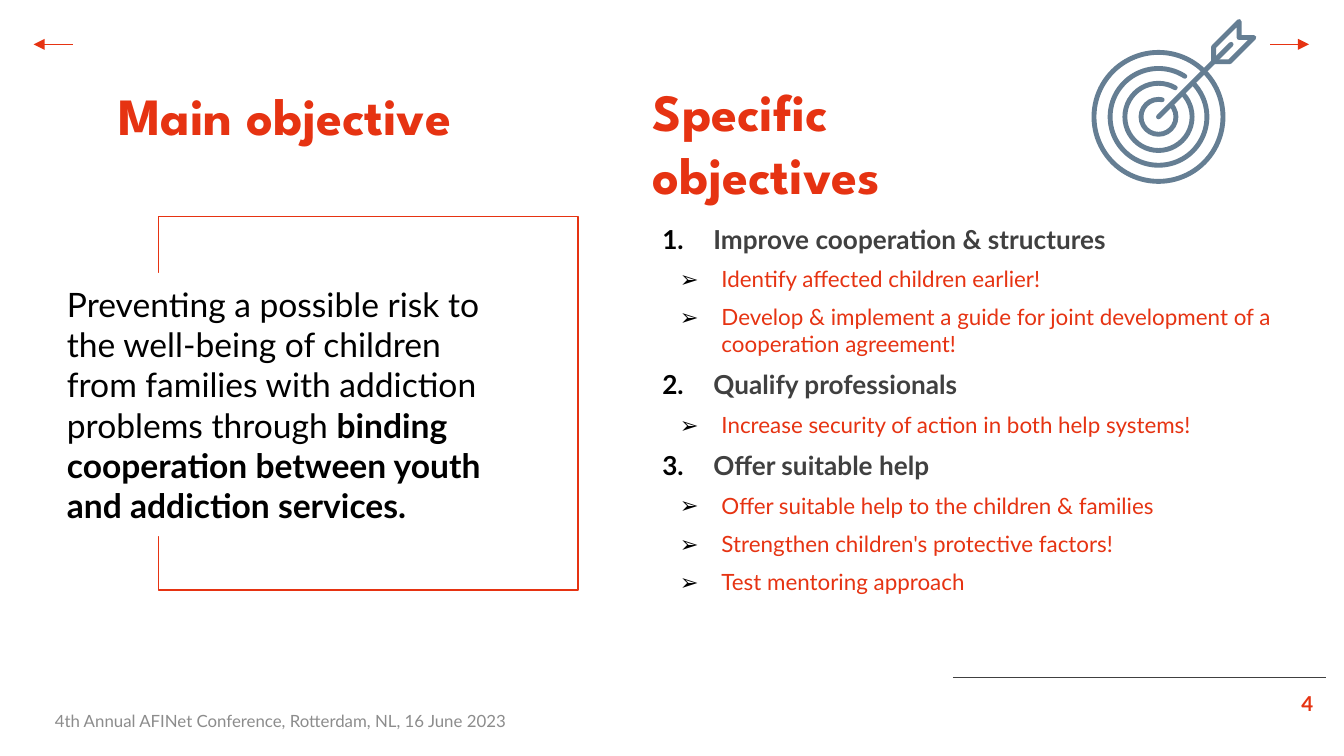
import dataclasses
import typing

import pptx
import pptx.dml.color
import pptx.enum.shapes
import pptx.enum.text
import pptx.oxml
import pptx.oxml.ns
import pptx.util

Inches = pptx.util.Inches
Pt = pptx.util.Pt
RGB = pptx.dml.color.RGBColor
SHAPE = pptx.enum.shapes.MSO_SHAPE
ANCHOR = pptx.enum.text.MSO_ANCHOR
ALIGN = pptx.enum.text.PP_ALIGN
qn = pptx.oxml.ns.qn

RED = RGB(0xE6, 0x33, 0x12)
BLACK = RGB(0, 0, 0)
WHITE = RGB(0xFF, 0xFF, 0xFF)
DARK = RGB(0x40, 0x40, 0x40)
GREY = RGB(0x8C, 0x8C, 0x8C)
SLATE = RGB(0x65, 0x7E, 0x93)

HEADING = {"name": "League Spartan", "size": Pt(28), "bold": True, "color": RED}
BODY = {"name": "Lato", "size": Pt(18), "bold": False, "color": BLACK}
BODY_BOLD = {**BODY, "bold": True}
GOAL = {"name": "Lato", "size": Pt(14), "bold": True, "color": DARK}
STEP = {"name": "Lato", "size": Pt(12), "bold": False, "color": RED}
FOOTER = {"name": "Lato", "size": Pt(9), "bold": False, "color": GREY}
PAGE = {"name": "Lato", "size": Pt(11), "bold": True, "color": RED}


class Box(typing.NamedTuple):
    left: float
    top: float
    width: float
    height: float


class Ring(typing.NamedTuple):
    """Ring of the target; an open one runs clockwise from start to end degrees."""
    radius: float
    start: float = 0
    end: float = 0


@dataclasses.dataclass
class Objective:
    goal: str
    steps: list[str]


OBJECTIVES = [
    Objective("Improve cooperation & structures", [
        "Identify affected children earlier!",
        "Develop & implement a guide for joint development of a cooperation agreement!"]),
    Objective("Qualify professionals", ["Increase security of action in both help systems!"]),
    Objective("Offer suitable help", [
        "Offer suitable help to the children & families",
        "Strengthen children's protective factors!",
        "Test mentoring approach"]),
]
TARGET_X, TARGET_Y = 8.62, 0.87
RINGS = [Ring(0.48), Ring(0.36, 318, 303), Ring(0.25, 319, 300), Ring(0.13, 322, 282)]
FEATHERS = [(9.03, 0.35), (9.22, 0.16), (9.22, 0.28), (9.33, 0.28), (9.15, 0.46), (9.03, 0.46)]


def place(sp, box: Box) -> None:
    for name, value in box._asdict().items():
        setattr(sp, name, Inches(value))


def add_run(p, text: str, style: dict) -> None:
    r = p.add_run()
    r.text = text
    for name, value in style.items():
        if name == "color":
            r.font.color.rgb = value
        else:
            setattr(r.font, name, value)


def format_frame(tf, anchor=ANCHOR.TOP, side: float = 0.1, edge: float = 0.1) -> None:
    values = {"word_wrap": True, "auto_size": pptx.enum.text.MSO_AUTO_SIZE.NONE,
              "vertical_anchor": anchor, "margin_left": Inches(side),
              "margin_right": Inches(side), "margin_top": Inches(edge),
              "margin_bottom": Inches(edge)}
    for name, value in values.items():
        setattr(tf, name, value)


def add_text(slide, box: Box, runs: list[tuple[str, dict]], align=ALIGN.LEFT, **frame):
    sp = slide.shapes.add_textbox(*map(Inches, box))
    format_frame(sp.text_frame, **frame)
    p = sp.text_frame.paragraphs[0]
    p.alignment = align
    for text, style in runs:
        add_run(p, text, style)
    return sp


def set_bullet(p, indent: float, hanging: float, tag: str, **attributes: str) -> None:
    pPr = p._p.get_or_add_pPr()
    pPr.set("marL", str(Inches(indent)))
    pPr.set("indent", str(-Inches(hanging)))
    color = pptx.oxml.parse_xml(
        f'<a:buClr {pptx.oxml.ns.nsdecls("a")}><a:srgbClr val="{BLACK}"/></a:buClr>')
    pPr.append(color)
    pPr.append(pPr.makeelement(qn("a:buFont"), {"typeface": "Lato"}))
    pPr.append(pPr.makeelement(qn(tag), attributes))


def add_objectives(slide, box: Box) -> None:
    tf = add_text(slide, box, [], edge=0.05).text_frame
    p = tf.paragraphs[0]
    for number, objective in enumerate(OBJECTIVES, 1):
        if number > 1:
            p = tf.add_paragraph()
        p.space_after = Pt(6)
        set_bullet(p, 0.38, 0.38, "a:buAutoNum", type="arabicPeriod", startAt=str(number))
        add_run(p, objective.goal, GOAL)
        for step in objective.steps:
            p = tf.add_paragraph()
            p.space_after = Pt(6)
            set_bullet(p, 0.44, 0.31, "a:buChar", char="➢")
            add_run(p, step, STEP)


def style_outline(sp, color: RGB, width: float) -> None:
    sp.shadow.inherit = False
    sp.fill.background()
    sp.line.color.rgb = color
    sp.line.width = Pt(width)


def add_line(slide, start: tuple, end: tuple, color: RGB, width: float = 0.75,
             arrow: bool = False):
    line = slide.shapes.add_connector(pptx.enum.shapes.MSO_CONNECTOR.STRAIGHT,
                                      *map(Inches, (*start, *end)))
    line.line.color.rgb = color
    line.line.width = Pt(width)
    spPr = line._element.spPr
    if arrow:
        ln = spPr.find(qn("a:ln"))
        ln.append(ln.makeelement(qn("a:tailEnd"), {"type": "triangle"}))
    spPr.append(spPr.makeelement(qn("a:effectLst"), {}))
    return line


def add_target(slide) -> None:
    parts = []
    for ring in RINGS:
        is_open = ring.start != ring.end
        box = Box(TARGET_X - ring.radius, TARGET_Y - ring.radius, 2 * ring.radius, 2 * ring.radius)
        sp = slide.shapes.add_shape(SHAPE.ARC if is_open else SHAPE.OVAL, *map(Inches, box))
        if is_open:
            for i, degrees in enumerate((ring.start, ring.end)):
                sp.adjustments[i] = degrees * 0.6  # 60000ths of a degree over 100000
        parts.append(sp)
    points = [(Inches(x), Inches(y)) for x, y in FEATHERS]
    builder = slide.shapes.build_freeform(*points[0])
    builder.add_line_segments(points[1:], close=True)
    parts.append(builder.convert_to_shape())
    for sp in parts:
        style_outline(sp, SLATE, 2.6)
    parts.append(add_line(slide, (TARGET_X, TARGET_Y), (9.16, 0.33), SLATE, 2.6))
    for sp in parts:
        sp._element.spPr.find(qn("a:ln")).set("cap", "rnd")


def main() -> None:
    prs = pptx.Presentation()
    prs.slide_width = Inches(10)
    prs.slide_height = prs.slide_width * 9 // 16
    slide = prs.slides.add_slide(prs.slide_layouts[5])

    add_line(slide, (7.09, 5.04), (9.87, 5.04), DARK)
    add_text(slide, Box(9.23, 5.04, 0.64, 0.43), [("4", PAGE)], ALIGN.RIGHT)

    frame = slide.shapes.add_shape(SHAPE.RECTANGLE, *map(Inches, Box(1.18, 1.61, 3.12, 2.78)))
    style_outline(frame, RED, 0.75)
    summary = add_text(slide, Box(0.4, 2.03, 3.5, 1.96), [
        ("Preventing a possible risk to the well-being of children from families "
         "with addiction problems through ", BODY),
        ("binding cooperation between youth and addiction services.", BODY_BOLD),
    ], anchor=ANCHOR.MIDDLE)
    summary.fill.solid()
    summary.fill.fore_color.rgb = WHITE

    title = slide.shapes.title
    place(title, Box(0.78, 0.52, 2.72, 0.63))
    format_frame(title.text_frame)
    p = title.text_frame.paragraphs[0]
    p.alignment = ALIGN.LEFT
    add_run(p, "Main objective", HEADING)
    add_text(slide, Box(4.76, 0.5, 2.84, 0.63), [("Specific objectives", HEADING)], edge=0.09)

    for start, end in ((9.45, 9.74), (0.54, 0.25)):
        add_line(slide, (start, 0.33), (end, 0.33), RED, arrow=True)
    add_objectives(slide, Box(4.83, 1.61, 4.76, 3.47))
    add_target(slide)
    add_text(slide, Box(0.31, 5.21, 6.38, 0.3),
             [("4th Annual AFINet Conference, Rotterdam, NL, 16 June 2023", FOOTER)],
             anchor=ANCHOR.MIDDLE, edge=0.05)
    prs.save("out.pptx")


if __name__ == "__main__":
    main()
